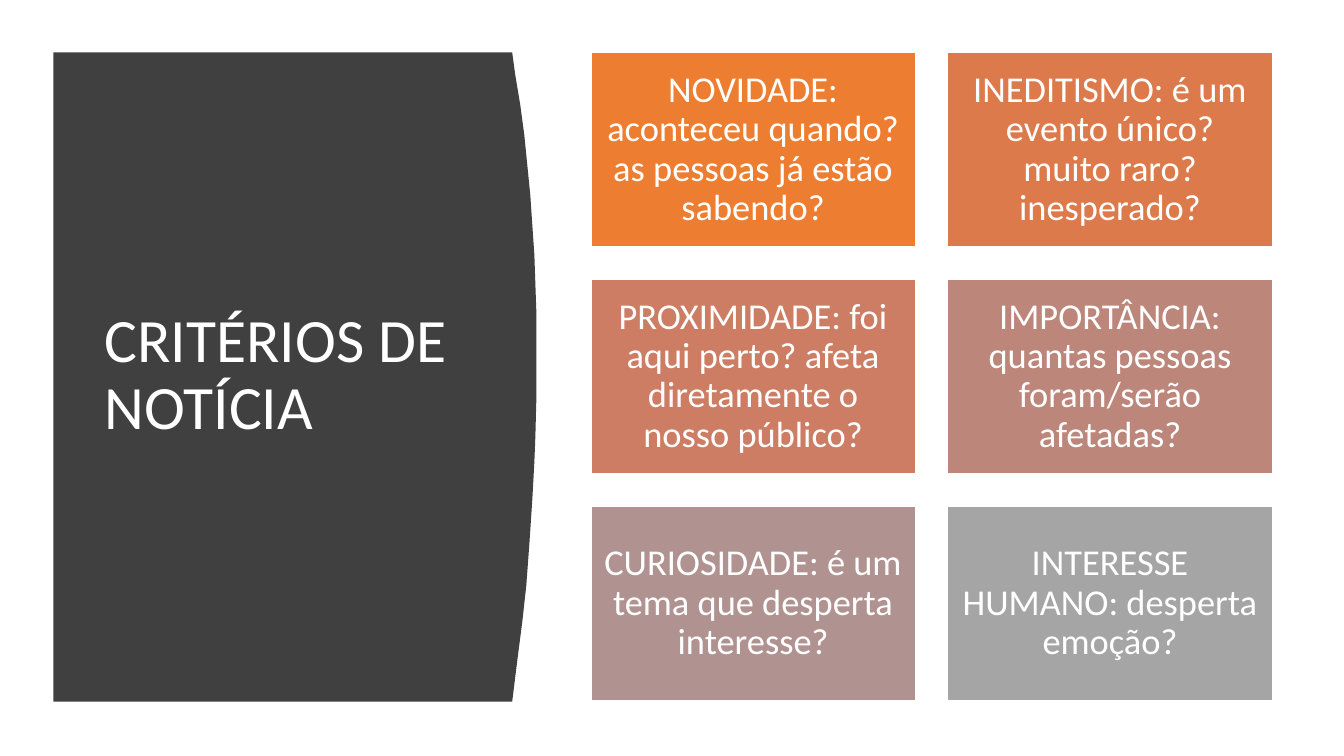
from pptx import Presentation
from pptx.dml.color import RGBColor
from pptx.enum.shapes import MSO_SHAPE
from pptx.enum.text import MSO_ANCHOR, PP_ALIGN
from pptx.util import Inches, Pt

WHITE = RGBColor(0xFF, 0xFF, 0xFF)
CHARCOAL = RGBColor(0x40, 0x40, 0x40)

CARDS = [
    ("NOVIDADE: aconteceu quando? as pessoas já estão sabendo?", RGBColor(0xED, 0x7D, 0x31)),
    ("INEDITISMO: é um evento único? muito raro? inesperado?", RGBColor(0xDC, 0x7A, 0x4B)),
    ("PROXIMIDADE: foi aqui perto? afeta diretamente o nosso público?", RGBColor(0xCC, 0x7D, 0x64)),
    ("IMPORTÂNCIA: quantas pessoas foram/serão afetadas?", RGBColor(0xBD, 0x86, 0x7B)),
    ("CURIOSIDADE: é um tema que desperta interesse?", RGBColor(0xB0, 0x93, 0x91)),
    ("INTERESSE HUMANO: desperta emoção?", RGBColor(0xA5, 0xA5, 0xA5)),
]
COLUMNS = 2
CARD_LEFT, CARD_TOP = 5.86, 0.52
CARD_WIDTH, CARD_HEIGHT = 3.22, 1.93
COLUMN_STEP, ROW_STEP = 3.54, 2.25

# Panel outline in hundredths of an inch, clockwise from the top left
PANEL_START = (53, 52)
PANEL_EDGE = [
    (508, 52), (511, 74), (516, 104), (520, 134), (523, 164), (526, 194),
    (528, 224), (530, 253), (531, 282), (532, 311), (532, 394), (531, 433),
    (530, 458), (528, 495), (525, 540), (522, 581), (518, 617), (514, 648),
    (511, 672), (508, 696), (53, 696),
]


def write_text(shape, text, size, alignment, margins):
    frame = shape.text_frame
    frame_format = {"word_wrap": True, "vertical_anchor": MSO_ANCHOR.MIDDLE, **margins}
    for name, value in frame_format.items():
        setattr(frame, name, value)
    para = frame.paragraphs[0]
    para.alignment = alignment
    para.line_spacing = 0.9
    span = para.add_run()
    span.text = text
    for name, value in {"name": "Calibri", "size": Pt(size)}.items():
        setattr(span.font, name, value)
    span.font.color.rgb = WHITE


deck = Presentation()
deck.slide_width = Inches(13.33)
deck.slide_height = Inches(7.5)
page = deck.slides.add_slide(deck.slide_layouts[6])

builder = page.shapes.build_freeform(*PANEL_START, scale=Inches(0.01))
builder.add_line_segments(PANEL_EDGE, close=True)
panel = builder.convert_to_shape()
panel.shadow.inherit = False
panel.fill.solid()
panel.fill.fore_color.rgb = CHARCOAL
panel.line.fill.background()

title = page.shapes.add_textbox(Inches(0.94), Inches(1.11), Inches(3.74), Inches(5.24))
write_text(title, "CRITÉRIOS DE NOTÍCIA", 44, PP_ALIGN.LEFT, {})

sides = ("left", "top", "right", "bottom")
card_margins = {f"margin_{side}": Inches(0.11) for side in sides}
for index, (text, color) in enumerate(CARDS):
    row, column = divmod(index, COLUMNS)
    card = page.shapes.add_shape(
        MSO_SHAPE.RECTANGLE,
        Inches(CARD_LEFT + column * COLUMN_STEP),
        Inches(CARD_TOP + row * ROW_STEP),
        Inches(CARD_WIDTH),
        Inches(CARD_HEIGHT),
    )
    card.shadow.inherit = False
    card.fill.solid()
    card.fill.fore_color.rgb = color
    card.line.color.rgb = WHITE
    card.line.width = Pt(1)
    write_text(card, text, 26, PP_ALIGN.CENTER, card_margins)

deck.save("out.pptx")
